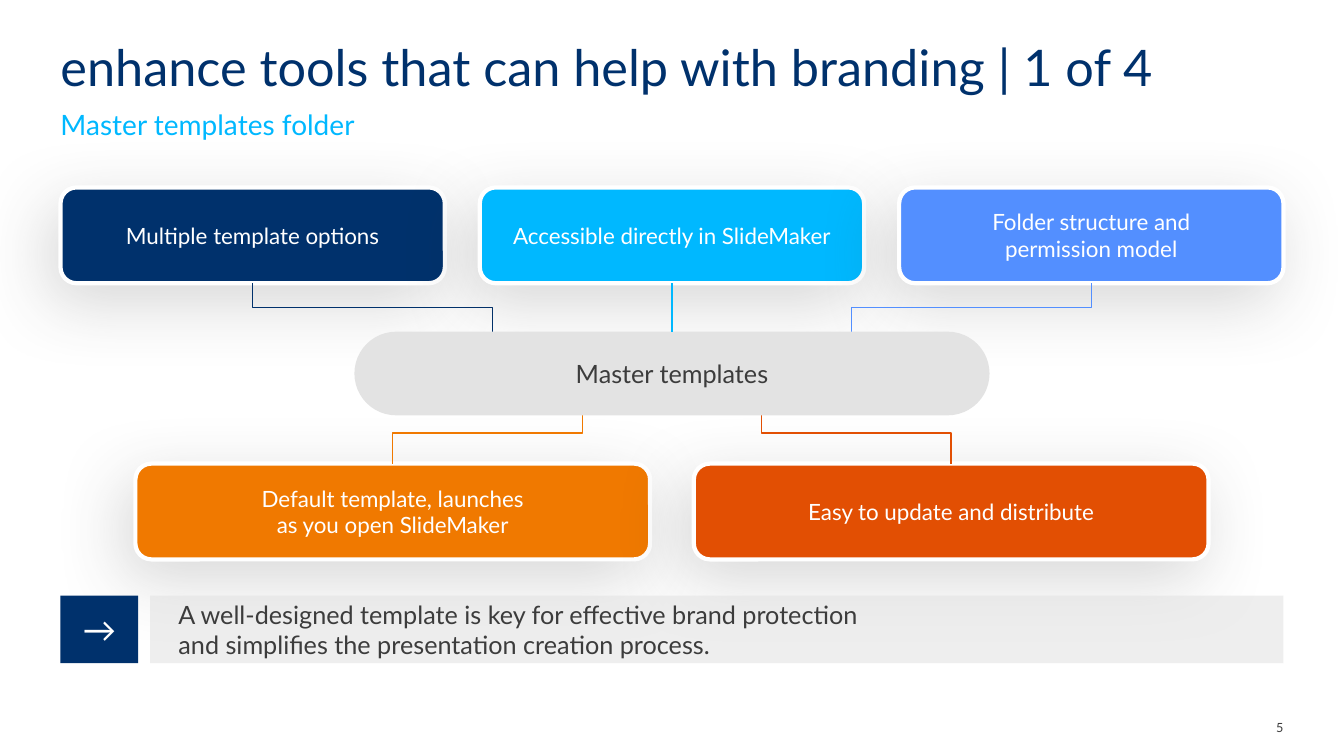
from dataclasses import dataclass

import lxml.etree
import pptx
import pptx.dml.color
import pptx.enum.shapes
import pptx.enum.text
import pptx.oxml.ns
import pptx.shapes.base
import pptx.shapes.connector
import pptx.slide
import pptx.text.text
import pptx.util

SLIDE_WIDTH = pptx.util.Inches(13.33)
SLIDE_HEIGHT = pptx.util.Inches(7.5)
FONT = "Lato"
NAVY, CYAN, BLUE, ORANGE, RED = "00316C", "00B8FF", "538FFF", "F07900", "E24F03"
WHITE, INK, PALE = "FFFFFF", "3C3C3C", "E3E3E3"

# Percent of the slide's width (x) or height (y)
CENTRE = 50
MARGIN = 4.5
CONTENT_WIDTH = 100 - 2 * MARGIN
CARD_HEIGHT = 12.67
HUB_TOP, HUB_WIDTH, HUB_HEIGHT = 43.87, 47.26, 11.07
HUB_INSIDE = 53.2
DOCK_STEP = 6.67
TAKEAWAY_TOP, TAKEAWAY_HEIGHT = 78.8, 8.93
ARROW_WIDTH, TAKEAWAY_LEFT = 5.78, 11.18

ROUNDED = pptx.enum.shapes.MSO_SHAPE.ROUNDED_RECTANGLE
RECTANGLE = pptx.enum.shapes.MSO_SHAPE.RECTANGLE
LEFT = pptx.enum.text.PP_ALIGN.LEFT
MIDDLE = pptx.enum.text.PP_ALIGN.CENTER
RIGHT = pptx.enum.text.PP_ALIGN.RIGHT


@dataclass(frozen=True)
class Area:
    """A rectangle in percent of the slide's size."""
    left: float
    top: float
    width: float
    height: float

    def emu(self) -> tuple[int, int, int, int]:
        return (across(self.left), down(self.top), across(self.width), down(self.height))


@dataclass(frozen=True)
class Card:
    lines: tuple[str, ...]
    colour: str
    dock: int  # steps from the hub's centre to the connector


@dataclass(frozen=True)
class CardRow:
    top: float
    card_width: float
    gap: float
    cards: tuple[Card, ...]

    def areas(self) -> list[Area]:
        count = len(self.cards)
        pitch = self.card_width + self.gap
        start = CENTRE - (count * pitch - self.gap) / 2
        return [Area(start + i * pitch, self.top, self.card_width, CARD_HEIGHT) for i in range(count)]


BENEFITS = CardRow(24.8, 28.6, 2.6, (
    Card(("Multiple template options",), NAVY, -2),
    Card(("Accessible directly in SlideMaker",), CYAN, 0),
    Card(("Folder structure and", "permission model"), BLUE, 2),
))
HANDLING = CardRow(61.33, 38.3, 3.25, (
    Card(("Default template, launches", "as you open SlideMaker"), ORANGE, -1),
    Card(("Easy to update and distribute",), RED, 1),
))


def across(percent: float) -> int:
    return round(SLIDE_WIDTH * percent / 100)


def down(percent: float) -> int:
    return round(SLIDE_HEIGHT * percent / 100)


def rgb(colour: str) -> pptx.dml.color.RGBColor:
    return pptx.dml.color.RGBColor.from_string(colour)


def write(frame: pptx.text.text.TextFrame, lines: tuple[str, ...], size: float, colour: str,
          align=LEFT, anchor=pptx.enum.text.MSO_ANCHOR.MIDDLE,
          insets: tuple[float, ...] = (0, 0, 0, 0)) -> None:
    """Fill a frame with one paragraph; insets are left, top, right, bottom in inches."""
    frame.word_wrap = True
    frame.auto_size = pptx.enum.text.MSO_AUTO_SIZE.NONE
    frame.vertical_anchor = anchor
    (frame.margin_left, frame.margin_top,
     frame.margin_right, frame.margin_bottom) = map(pptx.util.Inches, insets)
    paragraph = frame.paragraphs[0]
    paragraph.alignment = align
    for index, line in enumerate(lines):
        if index:
            paragraph.add_line_break()
        run = paragraph.add_run()
        run.text = line
        run.font.name = FONT
        run.font.size = pptx.util.Pt(size)
        run.font.color.rgb = rgb(colour)


def add_panel(slide: pptx.slide.Slide, kind, area: Area, colour: str) -> pptx.shapes.base.BaseShape:
    panel = slide.shapes.add_shape(kind, *area.emu())
    panel.shadow.inherit = False
    panel.fill.solid()
    panel.fill.fore_color.rgb = rgb(colour)
    panel.line.fill.background()
    return panel


def add_child(parent, tag: str, **attributes: str):
    child = lxml.etree.SubElement(parent, pptx.oxml.ns.qn(tag))
    for name, value in attributes.items():
        child.set(name, value)
    return child


def add_soft_shadow(panel: pptx.shapes.base.BaseShape) -> None:
    effects = panel._element.spPr.find(pptx.oxml.ns.qn("a:effectLst"))
    shadow = add_child(effects, "a:outerShdw", blurRad=str(pptx.util.Pt(50)),
                       dist=str(pptx.util.Pt(15)), dir=str(120 * 60000),
                       algn="ctr", rotWithShape="0")
    add_child(add_child(shadow, "a:srgbClr", val=INK), "a:alpha", val="20000")


def add_card(slide: pptx.slide.Slide, card: Card, area: Area) -> pptx.shapes.base.BaseShape:
    panel = add_panel(slide, ROUNDED, area, card.colour)
    panel.line.color.rgb = rgb(WHITE)
    panel.line.width = pptx.util.Pt(3)
    add_soft_shadow(panel)
    write(panel.text_frame, card.lines, 16, WHITE, MIDDLE, insets=(0.1, 0.05, 0.1, 0.05))
    return panel


def add_link(slide: pptx.slide.Slide, kind, colour: str) -> pptx.shapes.connector.Connector:
    link = slide.shapes.add_connector(kind, 0, 0, 0, 0)
    link.line.color.rgb = rgb(colour)
    link.line.width = pptx.util.Pt(1)
    add_child(link._element.spPr, "a:effectLst")
    return link


def add_elbow(slide: pptx.slide.Slide, x_top: float, y_top: float,
              x_bottom: float, y_bottom: float, colour: str) -> None:
    """Draw a down-across-down elbow as a quarter-turned connector."""
    link = add_link(slide, pptx.enum.shapes.MSO_CONNECTOR.ELBOW, colour)
    link.width = down(y_bottom - y_top)
    link.height = across(abs(x_bottom - x_top))
    link.left = across((x_top + x_bottom) / 2) - link.width // 2
    link.top = down((y_top + y_bottom) / 2) - link.height // 2
    frame = link._element.spPr.find(pptx.oxml.ns.qn("a:xfrm"))
    frame.set("rot", str(90 * 60000))
    if x_bottom > x_top:
        frame.set("flipV", "1")


def add_diagram(slide: pptx.slide.Slide) -> None:
    centre_card = None
    for row in (BENEFITS, HANDLING):
        for card, area in zip(row.cards, row.areas()):
            panel = add_card(slide, card, area)
            card_x = area.left + area.width / 2
            dock_x = CENTRE + card.dock * DOCK_STEP
            if card.dock == 0:
                centre_card = panel
            elif row is BENEFITS:
                add_elbow(slide, card_x, row.top + CARD_HEIGHT, dock_x, HUB_TOP, card.colour)
            else:
                add_elbow(slide, dock_x, HUB_INSIDE, card_x, row.top, card.colour)

    hub = add_panel(slide, ROUNDED, Area(CENTRE - HUB_WIDTH / 2, HUB_TOP, HUB_WIDTH, HUB_HEIGHT), PALE)
    hub.adjustments[0] = 0.5
    write(hub.text_frame, ("Master templates",), 18, INK, MIDDLE)
    centre_link = add_link(slide, pptx.enum.shapes.MSO_CONNECTOR.STRAIGHT, CYAN)
    centre_link.begin_connect(centre_card, 2)
    centre_link.end_connect(hub, 0)


def add_takeaway(slide: pptx.slide.Slide) -> None:
    arrow = add_panel(slide, RECTANGLE, Area(MARGIN, TAKEAWAY_TOP, ARROW_WIDTH, TAKEAWAY_HEIGHT), NAVY)
    write(arrow.text_frame, ("→",), 24, WHITE, MIDDLE, insets=(0.08, 0.08, 0.08, 0.08))
    message = add_panel(slide, RECTANGLE, Area(TAKEAWAY_LEFT, TAKEAWAY_TOP,
                        100 - MARGIN - TAKEAWAY_LEFT, TAKEAWAY_HEIGHT), PALE)
    add_child(message.fill._xPr.find(pptx.oxml.ns.qn("a:solidFill"))[0], "a:alpha", val="60000")
    write(message.text_frame, ("A well-designed template is key for effective brand protection",
                               "and simplifies the presentation creation process."),
          18, INK, insets=(0.28, 0.08, 0.08, 0.08))


def main() -> None:
    deck = pptx.Presentation()
    deck.slide_width, deck.slide_height = SLIDE_WIDTH, SLIDE_HEIGHT
    slide = deck.slides.add_slide(deck.slide_layouts.get_by_name("Title Only"))
    top = pptx.enum.text.MSO_ANCHOR.TOP

    title = slide.shapes.title
    title.left, title.top, title.width, title.height = Area(MARGIN, 4.8, CONTENT_WIDTH, 13.6).emu()
    write(title.text_frame, ("enhance tools that can help with branding | 1 of 4",), 36, NAVY, anchor=top)
    subtitle = slide.shapes.add_textbox(*Area(MARGIN, 14, CONTENT_WIDTH, 4.53).emu())
    write(subtitle.text_frame, ("Master templates folder",), 20, CYAN, anchor=top)
    subtitle.text_frame.paragraphs[0].line_spacing = 1.05

    add_diagram(slide)
    add_takeaway(slide)
    page_number = slide.shapes.add_textbox(*Area(92.2, 95.2, 3.3, 2).emu())
    write(page_number.text_frame, ("5",), 9, INK, RIGHT, top)
    deck.save("out.pptx")


if __name__ == "__main__":
    main()
